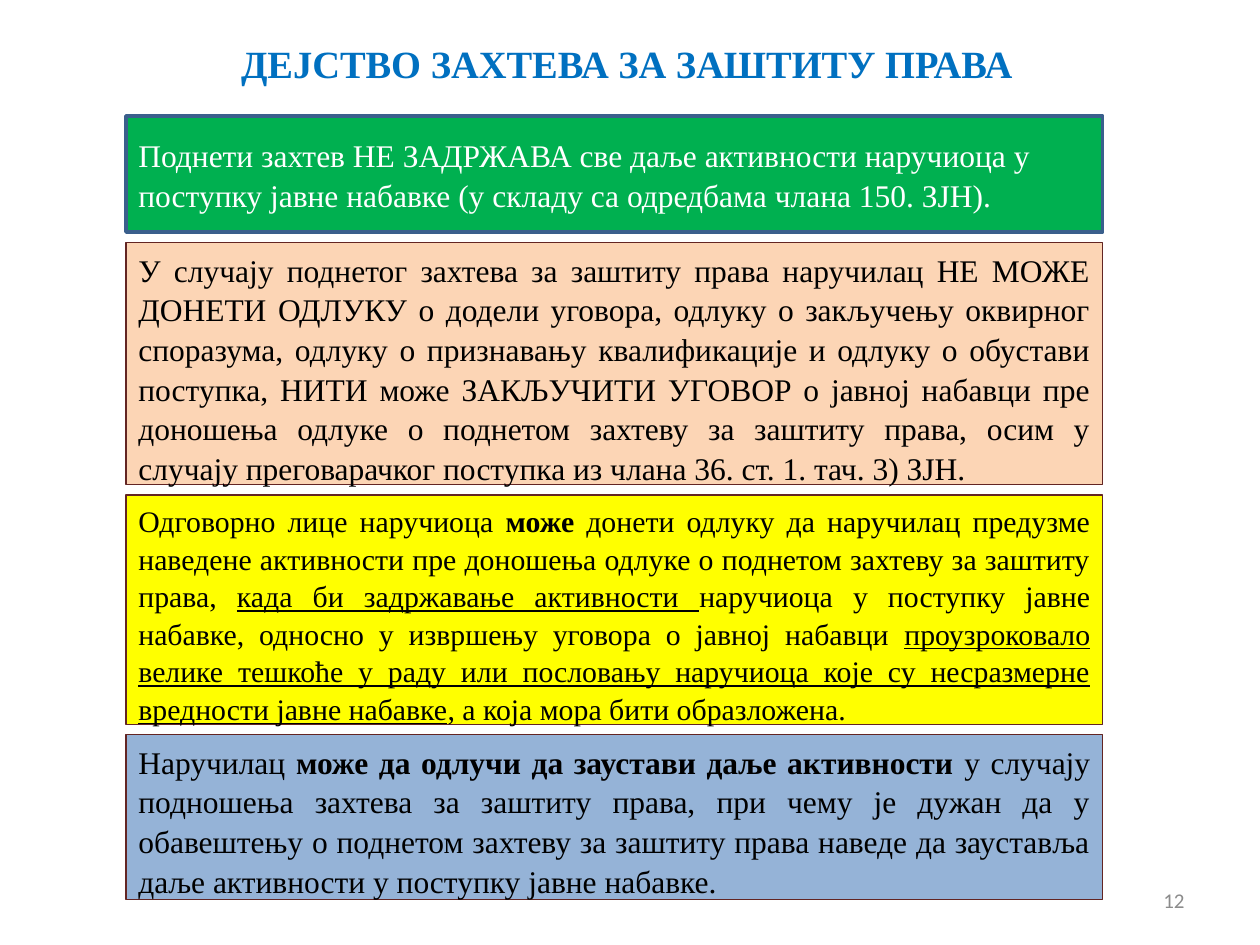
from dataclasses import dataclass

from pptx import Presentation
from pptx.dml.color import RGBColor
from pptx.enum.shapes import MSO_SHAPE
from pptx.enum.text import MSO_ANCHOR, MSO_AUTO_SIZE, PP_ALIGN
from pptx.util import Cm, Pt

RECTANGLE = MSO_SHAPE.RECTANGLE
MIDDLE, TOP = MSO_ANCHOR.MIDDLE, MSO_ANCHOR.TOP
FIT_TEXT = MSO_AUTO_SIZE.SHAPE_TO_FIT_TEXT
LEFT, CENTER = PP_ALIGN.LEFT, PP_ALIGN.CENTER
RIGHT, JUSTIFY = PP_ALIGN.RIGHT, PP_ALIGN.JUSTIFY

SERIF, SANS = "Times New Roman", "Calibri"
COLORS = {
    "title": "0070C0",
    "number": "8C8C8C",
    "white": "FFFFFF",
    "black": "000000",
    "green": "00B050",
    "peach": "FCD5B5",
    "yellow": "FFFF00",
    "blue": "95B3D7",
    "navy": "3A5F8C",
    "maroon": "632523",
}
PANEL_LEFT, PANEL_TOP, PANEL_WIDTH, PANEL_GAP = 2.54, 2.34, 19.69, 0.21


@dataclass
class Span:
    text: str
    bold: bool = False
    underline: bool = False


@dataclass
class Style:
    size: float
    color: str
    align: PP_ALIGN
    font: str = SERIF
    line_spacing: float = 1.05


@dataclass
class Panel:
    height: float
    fill: str
    paragraphs: list[list[Span]]
    style: Style
    line: str = "maroon"
    line_width: float = 0.75
    anchor: MSO_ANCHOR = TOP
    grows: bool = True


def color(name: str) -> RGBColor:
    return RGBColor.from_string(COLORS[name])


def write_text(shape, paragraphs: list[list[Span]], style: Style, anchor: MSO_ANCHOR) -> None:
    frame = shape.text_frame
    frame.word_wrap = True
    frame.vertical_anchor = anchor
    for index, spans in enumerate(paragraphs):
        paragraph = frame.add_paragraph() if index else frame.paragraphs[0]
        paragraph.alignment = style.align
        paragraph.line_spacing = style.line_spacing
        for span in spans:
            run = paragraph.add_run()
            run.text = span.text
            run.font.name = style.font
            run.font.size = Pt(style.size)
            run.font.bold = span.bold
            run.font.underline = span.underline
            run.font.color.rgb = color(style.color)


def add_label(slide, left: float, top: float, width: float, height: float,
              span: Span, style: Style) -> None:
    shape = slide.shapes.add_textbox(Cm(left), Cm(top), Cm(width), Cm(height))
    write_text(shape, [[span]], style, MIDDLE)


def add_panel(slide, top: float, panel: Panel) -> None:
    shape = slide.shapes.add_shape(
        RECTANGLE, Cm(PANEL_LEFT), Cm(top), Cm(PANEL_WIDTH), Cm(panel.height))
    shape.shadow.inherit = False
    shape.fill.solid()
    shape.fill.fore_color.rgb = color(panel.fill)
    shape.line.color.rgb = color(panel.line)
    shape.line.width = Pt(panel.line_width)
    write_text(shape, panel.paragraphs, panel.style, panel.anchor)
    if panel.grows:
        shape.text_frame.auto_size = FIT_TEXT


BODY = Style(18, "black", JUSTIFY)
PANELS = [
    Panel(2.34, "green", [
        [Span("Поднети захтев НЕ ЗАДРЖАВА све даље активности наручиоца у")],
        [Span("поступку јавне набавке (у складу са одредбама члана 150. ЗЈН).")],
    ], Style(18, "white", LEFT), "navy", 2, MIDDLE, False),
    Panel(4.88, "peach", [[
        Span("У случају поднетог захтева за заштиту права наручилац НЕ МОЖЕ "
             "ДОНЕТИ ОДЛУКУ о додели уговора, одлуку о закључењу оквирног "
             "споразума, одлуку о признавању квалификације и одлуку о обустави "
             "поступка, НИТИ може ЗАКЉУЧИТИ УГОВОР о јавној набавци пре "
             "доношења одлуке о поднетом захтеву за заштиту права, осим у "
             "случају преговарачког поступка из члана 36. ст. 1. тач. 3) ЗЈН."),
    ]], BODY),
    Panel(4.62, "yellow", [[
        Span("Одговорно лице наручиоца "),
        Span("може", bold=True),
        Span(" донети одлуку да наручилац предузме наведене активности пре "
             "доношења одлуке о поднетом захтеву за заштиту права, "),
        Span("када би задржавање активности ", underline=True),
        Span("наручиоца у поступку јавне набавке, односно у извршењу уговора "
             "о јавној набавци "),
        Span("проузроковало велике тешкоће у раду или пословању наручиоца "
             "које су несразмерне вредности јавне набавке", underline=True),
        Span(", а која мора бити образложена."),
    ]], Style(17, "black", JUSTIFY)),
    Panel(3.33, "blue", [[
        Span("Наручилац "),
        Span("може да одлучи да заустави даље активности ", bold=True),
        Span("у случају подношења захтева за заштиту права, при чему је дужан "
             "да у обавештењу о поднетом захтеву за заштиту права наведе да "
             "зауставља даље активности у поступку јавне набавке."),
    ]], BODY),
]


def main() -> None:
    presentation = Presentation()
    presentation.slide_width, presentation.slide_height = Cm(25.4), Cm(19.05)
    slide = presentation.slides.add_slide(presentation.slide_layouts[6])
    add_label(slide, 1.27, 0.64, 22.73, 1.27,
              Span("ДЕЈСТВО ЗАХТЕВА ЗА ЗАШТИТУ ПРАВА", bold=True),
              Style(22, "title", CENTER, line_spacing=1))
    top = PANEL_TOP
    for panel in PANELS:
        add_panel(slide, top, panel)
        top += panel.height + PANEL_GAP
    add_label(slide, 18.2, 17.65, 5.93, 1.01, Span("12"),
              Style(12, "number", RIGHT, SANS, 1))
    presentation.save("out.pptx")


if __name__ == "__main__":
    main()
